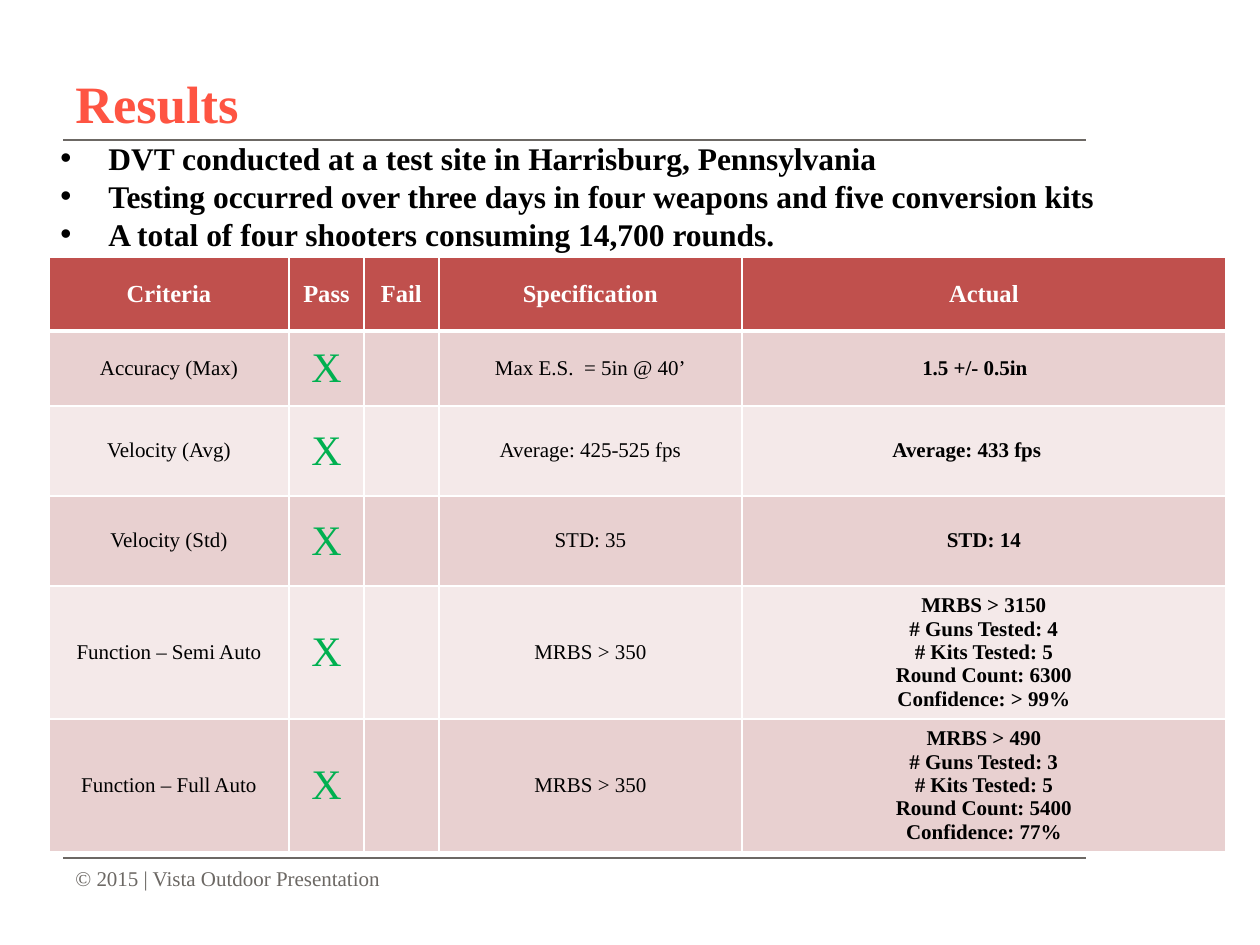
import dataclasses

import lxml.etree
import pptx
import pptx.dml.color
import pptx.enum.shapes
import pptx.enum.text
import pptx.oxml.ns
import pptx.util

PX = 914400 / 126
FONT = "Times New Roman"

RGB = pptx.dml.color.RGBColor
BLACK = RGB(0x00, 0x00, 0x00)
WHITE = RGB(0xFF, 0xFF, 0xFF)
GRAY = RGB(0x6C, 0x68, 0x64)
ORANGE = RGB(0xFE, 0x54, 0x42)
GREEN = RGB(0x00, 0xB0, 0x50)
HEADER_RED = RGB(0xC0, 0x50, 0x4D)
BANDS = (RGB(0xE8, 0xD0, 0xD0), RGB(0xF4, 0xE9, 0xE9))

ANCHOR = pptx.enum.text.MSO_ANCHOR
CENTER = pptx.enum.text.PP_ALIGN.CENTER


@dataclasses.dataclass(frozen=True)
class Style:
    size: int
    color: RGB = BLACK
    bold: bool = False


@dataclasses.dataclass(frozen=True)
class Box:
    left: int
    top: int
    width: int
    height: int

    def emu(self) -> tuple:
        return tuple(px(v) for v in dataclasses.astuple(self))


@dataclasses.dataclass(frozen=True)
class Result:
    criteria: str
    specification: str
    actual: tuple
    right_inset: int = 0


HEADING = Style(14, WHITE, True)
BODY = Style(12)
ACTUAL = Style(12, bold=True)
MARK = Style(24, GREEN)

HEADERS = ("Criteria", "Pass", "Fail", "Specification", "Actual")
COLUMN_WIDTHS = (240, 75, 75, 303, 484)
ROW_HEIGHTS = (74, 75, 90, 90, 133, 133)
RESULTS = (
    Result("Accuracy (Max)", "Max E.S.  = 5in @ 40’", ("1.5 +/- 0.5in",), 18),
    Result("Velocity (Avg)", "Average: 425-525 fps", ("Average: 433 fps",), 34),
    Result("Velocity (Std)", "STD: 35", ("STD: 14",)),
    Result("Function – Semi Auto", "MRBS > 350",
           ("MRBS > 3150", "# Guns Tested: 4", "# Kits Tested: 5",
            "Round Count: 6300", "Confidence: > 99%")),
    Result("Function – Full Auto", "MRBS > 350",
           ("MRBS > 490", "# Guns Tested: 3", "# Kits Tested: 5",
            "Round Count: 5400", "Confidence: 77%")),
)
BULLETS = (
    "DVT conducted at a test site in Harrisburg, Pennsylvania",
    "Testing occurred over three days in four weapons and five conversion kits",
    "A total of four shooters consuming 14,700 rounds.",
)


def px(value: int) -> int:
    return round(value * PX)


def write(tf, lines: tuple, style: Style) -> None:
    """Fill a text frame with one paragraph per line."""
    for i, line in enumerate(lines):
        p = tf.add_paragraph() if i else tf.paragraphs[0]
        r = p.add_run()
        r.text = line
        r.font.name = FONT
        r.font.size = pptx.util.Pt(style.size)
        r.font.bold = style.bold
        r.font.color.rgb = style.color


def add_text(s, box: Box, lines: tuple, style: Style, anchor=ANCHOR.MIDDLE):
    tf = s.shapes.add_textbox(*box.emu()).text_frame
    tf.word_wrap = True
    tf.vertical_anchor = anchor
    write(tf, lines, style)
    return tf


def add_rule(s, y: int) -> None:
    line = s.shapes.add_connector(pptx.enum.shapes.MSO_CONNECTOR.STRAIGHT,
                                  px(63), px(y), px(1086), px(y))
    line.line.color.rgb = GRAY
    line.line.width = pptx.util.Pt(0.75)
    lxml.etree.SubElement(line._element.spPr, pptx.oxml.ns.qn("a:effectLst"))


def add_bullets(s) -> None:
    qn = pptx.oxml.ns.qn
    tf = add_text(s, Box(48, 121, 1198, 149), BULLETS, Style(18, bold=True))
    for p in tf.paragraphs:
        p.line_spacing = pptx.util.Pt(21.7)
        pPr = p._p.get_or_add_pPr()
        pPr.set("marL", str(px(48)))
        pPr.set("indent", str(px(-48)))
        lxml.etree.SubElement(pPr, qn("a:buFont"), typeface="Arial")
        lxml.etree.SubElement(pPr, qn("a:buChar"), char="•")


def set_borders(cell, top: int, bottom: int) -> None:
    """Draw white borders; top and bottom widths are in points."""
    qn = pptx.oxml.ns.qn
    tcPr = cell._tc.get_or_add_tcPr()
    widths = {"lnL": 1, "lnR": 1, "lnT": top, "lnB": bottom}
    for i, (side, width) in enumerate(widths.items()):
        ln = lxml.etree.Element(qn(f"a:{side}"), w=str(pptx.util.Pt(width)))
        fill = lxml.etree.SubElement(ln, qn("a:solidFill"))
        lxml.etree.SubElement(fill, qn("a:srgbClr"), val=str(WHITE))
        tcPr.insert(i, ln)


def fill_cell(cell, lines: tuple, style: Style, fill: RGB,
              right_inset: int = 0) -> None:
    cell.margin_left = cell.margin_top = cell.margin_bottom = 0
    cell.margin_right = px(right_inset)
    cell.vertical_anchor = ANCHOR.MIDDLE
    cell.fill.solid()
    cell.fill.fore_color.rgb = fill
    write(cell.text_frame, lines, style)
    for p in cell.text_frame.paragraphs:
        p.alignment = CENTER


def add_results_table(s) -> None:
    box = Box(49, 257, sum(COLUMN_WIDTHS), sum(ROW_HEIGHTS))
    table = s.shapes.add_table(len(ROW_HEIGHTS), len(COLUMN_WIDTHS),
                               *box.emu()).table
    for column, width in zip(table.columns, COLUMN_WIDTHS):
        column.width = px(width)
    for row, height in zip(table.rows, ROW_HEIGHTS):
        row.height = px(height)

    for c, header in enumerate(HEADERS):
        cell = table.cell(0, c)
        fill_cell(cell, (header,), HEADING, HEADER_RED)
        set_borders(cell, 1, 3)
    for i, result in enumerate(RESULTS):
        contents = (
            ((result.criteria,), BODY, 0),
            (("X",), MARK, 0),
            ((), BODY, 0),
            ((result.specification,), BODY, 0),
            (result.actual, ACTUAL, result.right_inset),
        )
        for c, (lines, style, inset) in enumerate(contents):
            cell = table.cell(i + 1, c)
            fill_cell(cell, lines, style, BANDS[i % 2], inset)
            set_borders(cell, 1 if i else 3, 1)


def main() -> None:
    prs = pptx.Presentation()
    prs.slide_width, prs.slide_height = px(1260), px(945)
    s = prs.slides.add_slide(prs.slide_layouts[6])
    for y in (140, 858):
        add_rule(s, y)
    add_text(s, Box(63, 859, 708, 50),
             ("© 2015 | Vista Outdoor Presentation",), Style(12, GRAY), ANCHOR.TOP)
    add_text(s, Box(63, 64, 1134, 77), ("Results",), Style(30, ORANGE, True))
    add_results_table(s)
    add_bullets(s)
    prs.save("out.pptx")


if __name__ == "__main__":
    main()
